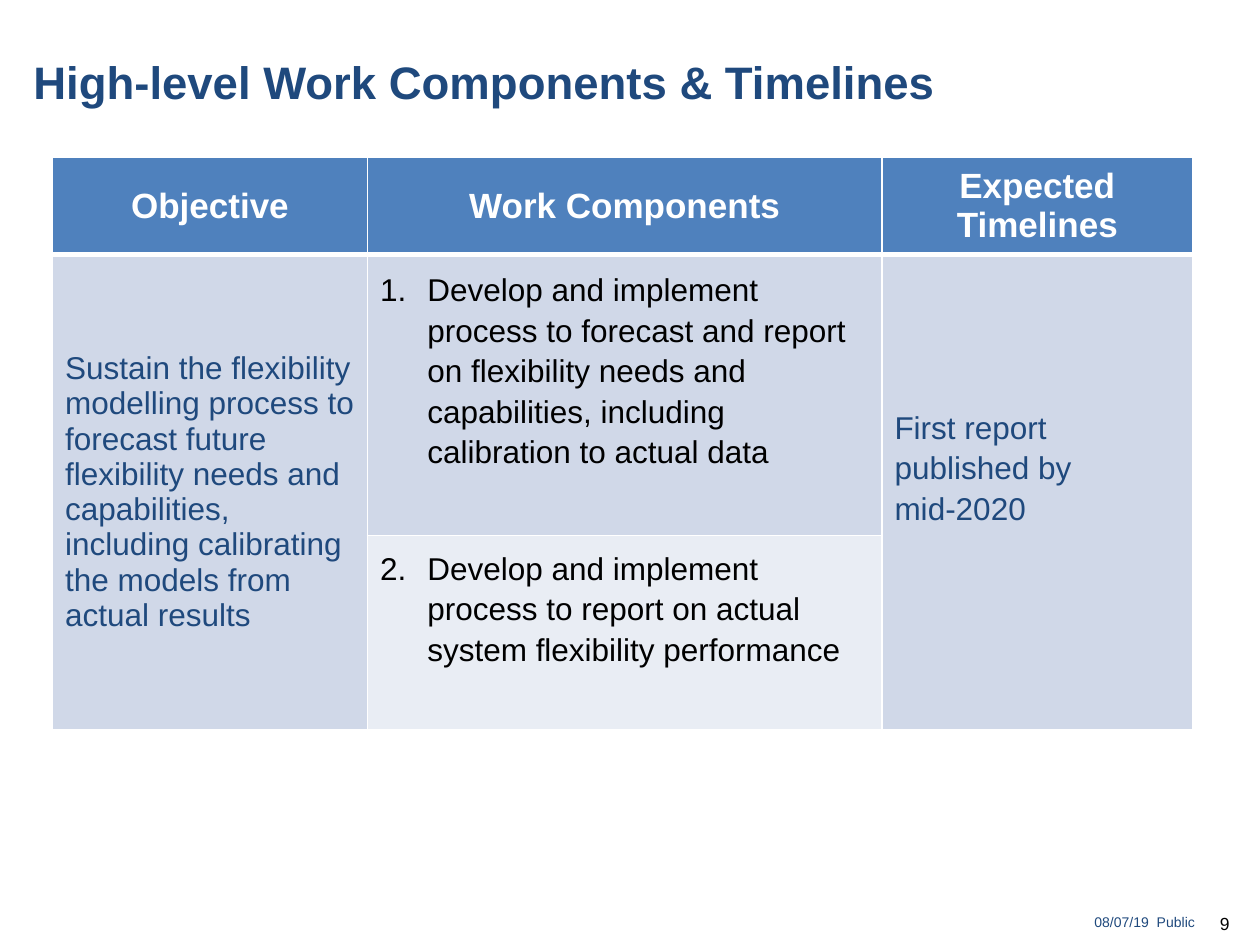
import lxml.etree
import pptx
import pptx.dml.color
import pptx.enum.text
import pptx.oxml.ns
import pptx.util

Pt = pptx.util.Pt
qn = pptx.oxml.ns.qn
ALIGN = pptx.enum.text.PP_ALIGN
ANCHOR = pptx.enum.text.MSO_ANCHOR
NAVY, BLUE, PALE, MIST = "1F497D", "4F81BD", "D0D8E8", "E9EDF4"
WHITE, BLACK = "FFFFFF", "000000"


def color(code):
    """Turn a hex string into a colour."""
    return pptx.dml.color.RGBColor.from_string(code)


def write(para, text, size, code, bold=False, align=ALIGN.LEFT):
    """Write text into a paragraph, breaking at newlines."""
    para.alignment = align
    for i, line in enumerate(text.split("\n")):
        if i:
            para.add_line_break()
        run = para.add_run()
        run.text = line
        font = run.font
        font.name, font.size, font.bold = "Arial", Pt(size), bold
        font.color.rgb = color(code)


def label(slide, box, text, size, code, anchor, bold=False, align=ALIGN.LEFT):
    """Place one line of text in a box."""
    frame = slide.shapes.add_textbox(*map(Pt, box)).text_frame
    frame.word_wrap = True
    frame.vertical_anchor = anchor
    write(frame.paragraphs[0], text, size, code, bold, align)


def number(para, start):
    """Give a paragraph a hanging automatic number."""
    props = para._p.get_or_add_pPr()
    props.set("marL", str(Pt(27)))
    props.set("indent", str(-Pt(27)))
    lxml.etree.SubElement(props, qn("a:buFont"), typeface="+mj-lt")
    lxml.etree.SubElement(props, qn("a:buAutoNum"), type="arabicPeriod", startAt=str(start))


def style(cell, fill, base=1):
    """Set the fill and the white borders of a cell."""
    props = cell._tc.get_or_add_tcPr()
    for side, width in zip("LRTB", (1, 1, 1, base)):
        line = lxml.etree.SubElement(props, qn(f"a:ln{side}"), w=str(Pt(width)))
        solid = lxml.etree.SubElement(line, qn("a:solidFill"))
        lxml.etree.SubElement(solid, qn("a:srgbClr"), val=WHITE)
    cell.fill.solid()
    cell.fill.fore_color.rgb = color(fill)
    cell.vertical_anchor = ANCHOR.MIDDLE


def loose(cell, text, code, start=None):
    """Write a widely spaced body cell with room below its text."""
    cell.margin_bottom = Pt(33)
    para = cell.text_frame.paragraphs[0]
    if start:
        number(para, start)
    para.line_spacing = 1.15
    write(para, text, 18, code)


def plan(slide, box):
    """Build the table of objective, work components and timelines."""
    left, top, width, height = box
    table = slide.shapes.add_table(3, 3, *map(Pt, box)).table
    for col, part in zip(table.columns, (180, 294, width - 474)):
        col.width = Pt(part)
    for row, part in zip(table.rows, (51.6, 156, height - 207.6)):
        row.height = Pt(part)
    for c, head in enumerate(("Objective", "Work Components", "Expected Timelines")):
        style(table.cell(0, c), BLUE, 3)
        write(table.cell(0, c).text_frame.paragraphs[0], head, 20, WHITE, True, ALIGN.CENTER)
        for r in (1, 2):
            style(table.cell(r, c), MIST if (r, c) == (2, 1) else PALE)
    for c in (0, 2):
        table.cell(1, c).merge(table.cell(2, c))
    goal = ("Sustain the flexibility modelling process to forecast future flexibility needs "
            "and capabilities, including calibrating the models from actual results")
    write(table.cell(1, 0).text_frame.paragraphs[0], goal, 18, NAVY)
    tasks = ("Develop and implement process to forecast and report on flexibility needs "
             "and capabilities, including calibration to actual data",
             "Develop and implement process to report on actual system flexibility performance")
    for r, task in enumerate(tasks, 1):
        loose(table.cell(r, 1), task, BLACK, r)
    loose(table.cell(1, 2), "First report published by \nmid-2020", NAVY)


def footer(slide, box):
    """Place the date and the page number along the bottom."""
    left, top, width, height = box
    label(slide, (left, top, width - 30, 25), "08/07/19  Public", 8, NAVY,
          ANCHOR.BOTTOM, align=ALIGN.RIGHT)
    label(slide, (left + width - 30, top + 8, 30, height - 8), "9", 10, BLACK, ANCHOR.TOP)


def main():
    """Build and save the slide."""
    deck = pptx.Presentation()
    deck.slide_width, deck.slide_height = Pt(720), Pt(540)
    slide = deck.slides.add_slide(deck.slide_layouts[6])
    label(slide, (12, 19.5, 540, 54), "High-level Work Components & Timelines", 26, NAVY,
          ANCHOR.MIDDLE, True)
    plan(slide, (30, 90, 651.6, 317.6))
    footer(slide, (522, 510, 198, 30))
    deck.save("out.pptx")


if __name__ == "__main__":
    main()
